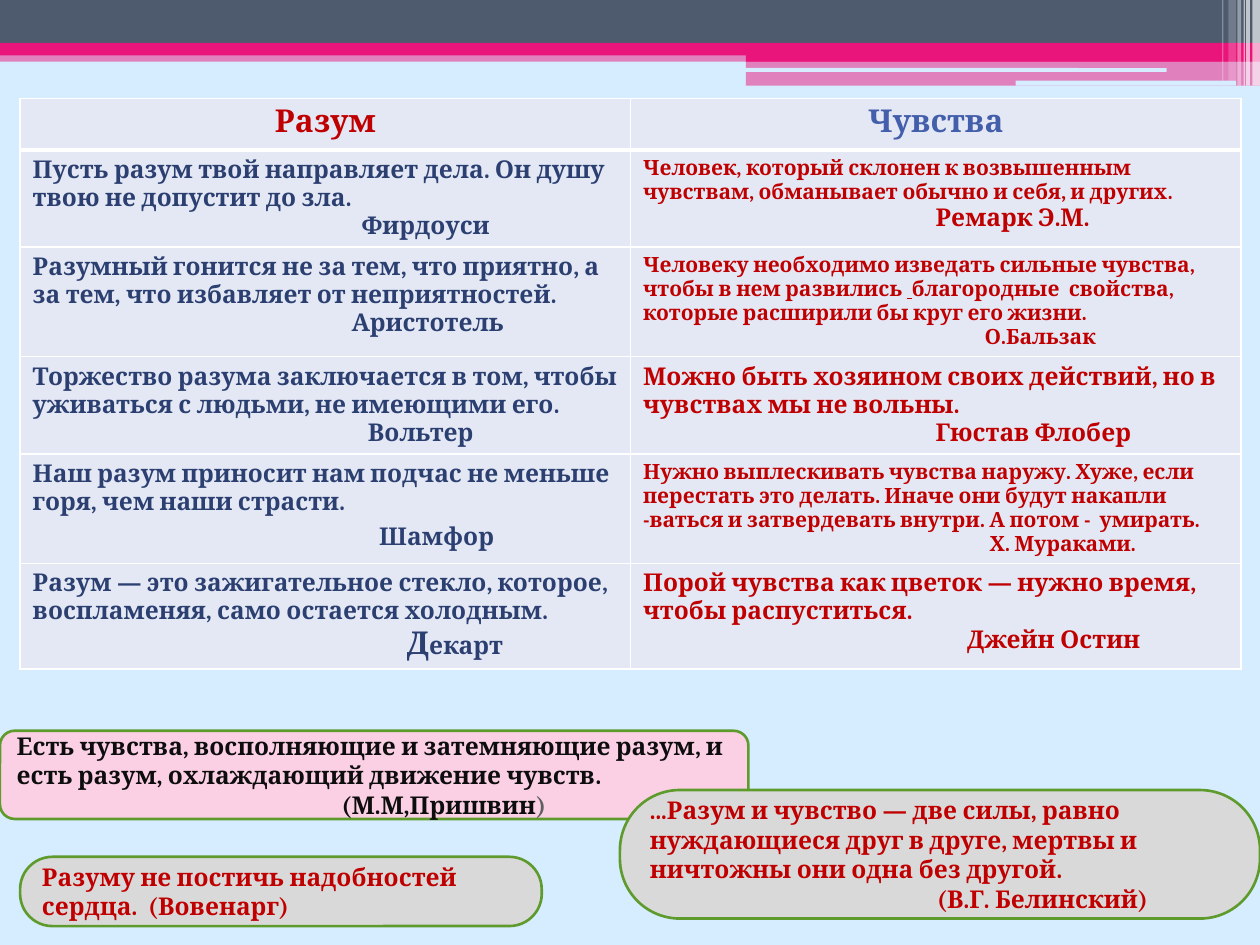
"""Build a slide of quotations about reason and feelings."""
from lxml import etree
from pptx import Presentation
from pptx.dml.color import RGBColor
from pptx.enum.shapes import MSO_SHAPE
from pptx.enum.text import MSO_ANCHOR, PP_ALIGN
from pptx.oxml.ns import qn
from pptx.util import Inches, Pt

RECT, ROUND = MSO_SHAPE.RECTANGLE, MSO_SHAPE.ROUNDED_RECTANGLE
MIDDLE = MSO_ANCHOR.MIDDLE
LEFT, CENTER = PP_ALIGN.LEFT, PP_ALIGN.CENTER
FONT = "Cambria"
WIDE, HIGH = 10, 7.5

HUES = {
    "sky": "D6ECFF", "slate": "4E5B6F", "pink": "EA157A", "white": "FFFFFF",
    "cell": "E3E8F4", "red": "C00000", "blue": "435EAA", "navy": "2C3F71",
    "rose": "FBD0E4", "gray": "D9D9D9", "green": "5E9B2C",
    "ink": "0D0D0D", "dim": "5F5F5F",
}

BANDS = [
    (RECT, 0, 0.4, WIDE, 0.09, "pink", 50),
    (RECT, 0, 0, WIDE, 0.34, "slate", 100),
    (RECT, 0, 0.34, WIDE, 0.1, "pink", 100),
    (RECT, 5.92, 0.39, 4.08, 0.1, "pink", 100),
    (RECT, 5.92, 0.48, 4.08, 0.2, "pink", 50),
    (ROUND, 5.91, 0.54, 3.35, 0.03, "sky", 100),
    (ROUND, 8.06, 0.64, 1.75, 0.04, "sky", 100),
]
STRIPES = [
    (9.94, 0.06, 0.68, 65), (9.89, 0.03, 0.68, 65), (9.87, 0.01, 0.68, 60),
    (9.82, 0.03, 0.68, 40), (9.75, 0.06, 0.64, 20), (9.7, 0.01, 0.64, 30),
]

HEADS = [("Разум", "red"), ("Чувства", "blue")]
INKS = ["navy", "red"]
ROWS = [0.41, 0.77, 0.87, 0.77, 0.87, 0.84]
QUOTES = [
    [(14, ["Пусть разум твой направляет дела. Он душу твою не допустит до зла."],
      14, ["Фирдоуси"], 2.61),
     (12, ["Человек, который склонен к возвышенным чувствам, обманывает обычно "
           "и себя, и других."], 14, ["Ремарк Э.М."], 2.32)],
    [(14, ["Разумный гонится не за тем, что приятно, а за тем, что избавляет "
           "от неприятностей."], 14, ["Аристотель"], 2.53),
     (12, ["Человеку необходимо изведать сильные чувства, чтобы в нем развились ",
           (" ", {"line": True}),
           "благородные  свойства, которые расширили бы круг его жизни."],
      12, ["О.Бальзак"], 2.71)],
    [(14, ["Торжество разума заключается в том, чтобы уживаться с людьми, "
           "не имеющими его."], 14, ["Вольтер"], 2.66),
     (14, ["Можно быть хозяином своих действий, но в чувствах мы не вольны."],
      14, ["Гюстав Флобер"], 2.32)],
    [(14, ["Наш разум приносит нам подчас не меньше горя, чем наши страсти."],
      14, ["Шамфор"], 2.75, 4),
     (12, ["Нужно выплескивать чувства наружу. Хуже, если перестать это делать. "
           "Иначе они будут накапли -ваться и затвердевать внутри. "
           "А потом -  умирать."], 12, ["Х. Мураками."], 2.75)],
    [(14, ["Разум — это зажигательное стекло, которое, воспламеняя, "
           "само остается холодным."], 14, [("Д", {"size": 18}), "екарт"], 2.97),
     (14, ["Порой чувства как цветок — нужно время, чтобы распуститься."],
      14, ["Джейн Остин"], 2.57)],
]

BOXES = [
    (0, 5.8, 5.94, 0.7, 0.167, "rose", "ink",
     ["Есть чувства, восполняющие и затемняющие разум, и есть разум, "
      "охлаждающий движение чувств."],
     ["(М.М,Пришвин", (")", {"hue": "dim"})], 2.58),
    (0.16, 6.8, 4.14, 0.55, 0.467, "gray", "red",
     ["Разуму не постичь надобностей сердца.  (Вовенарг)"], None, 0),
    (4.92, 6.27, 5.08, 1.02, 0.467, "gray", "red",
     ["...Разум и чувство — две силы, равно нуждающиеся друг в друге, мертвы "
      "и ничтожны они одна без другой."], ["(В.Г. Белинский)"], 2.28),
]


def rgb(hue):
    return RGBColor.from_string(HUES[hue])


def paint(fill, hue, alpha=100):
    fill.solid()
    fill.fore_color.rgb = rgb(hue)
    if alpha < 100:
        tint = fill._xPr.find(qn("a:solidFill"))[0]
        etree.SubElement(tint, qn("a:alpha")).set("val", str(alpha * 1000))


def draw(slide, kind, x, y, w, h, hue, alpha=100):
    shape = slide.shapes.add_shape(kind, *map(Inches, (x, y, w, h)))
    shape.shadow.inherit = False
    shape.line.fill.background()
    paint(shape.fill, hue, alpha)
    return shape


def write(para, parts, size, hue, align=LEFT, indent=0, gap=0):
    para.alignment = align
    para.space_before = Pt(gap)
    if indent:
        para._p.get_or_add_pPr().set("marL", str(Inches(indent)))
    for part in parts:
        text, look = (part, {}) if isinstance(part, str) else part
        run = para.add_run()
        run.text = text
        font = run.font
        font.name, font.bold = FONT, True
        font.size = Pt(look.get("size", size))
        font.color.rgb = rgb(look.get("hue", hue))
        font.underline = look.get("line", False)


def quote(frame, hue, size, parts, small, name, indent, gap=0):
    frame.word_wrap = True
    write(frame.paragraphs[0], parts, size, hue)
    if name:
        write(frame.add_paragraph(), name, small, hue, indent=indent, gap=gap)


def edge(cell, top, bottom):
    props = cell._tc.get_or_add_tcPr()
    sides = [("lnL", 1), ("lnR", 1), ("lnT", top), ("lnB", bottom)]
    for spot, (side, width) in enumerate(sides):
        line = etree.Element(qn("a:" + side), w=str(Pt(width)))
        fill = etree.SubElement(line, qn("a:solidFill"))
        etree.SubElement(fill, qn("a:srgbClr"), val=HUES["white"])
        props.insert(spot, line)


def grid(slide):
    table = slide.shapes.add_table(
        len(ROWS), len(HEADS), Inches(0.16), Inches(0.78),
        Inches(9.69), Inches(sum(ROWS))).table
    table.first_row = table.horz_banding = False
    for r, high in enumerate(ROWS):
        table.rows[r].height = Inches(high)
        for c, (head, hue) in enumerate(HEADS):
            cell = table.cell(r, c)
            paint(cell.fill, "cell")
            edge(cell, 3 if r == 1 else 1, 3 if r == 0 else 1)
            if r:
                quote(cell.text_frame, INKS[c], *QUOTES[r - 1][c])
            else:
                write(cell.text_frame.paragraphs[0], [head], 18, hue, CENTER)


def main():
    deck = Presentation()
    deck.slide_width, deck.slide_height = Inches(WIDE), Inches(HIGH)
    slide = deck.slides.add_slide(deck.slide_layouts[6])
    paint(slide.background.fill, "sky")
    for band in BANDS:
        draw(slide, *band)
    for x, w, h, alpha in STRIPES:
        draw(slide, RECT, x, 0, w, h, "white", alpha)
    grid(slide)
    for x, y, w, h, bend, hue, ink, parts, name, indent in BOXES:
        box = draw(slide, ROUND, x, y, w, h, hue)
        box.adjustments[0] = bend
        box.line.color.rgb = rgb("green")
        box.line.width = Pt(1.5)
        box.text_frame.vertical_anchor = MIDDLE
        quote(box.text_frame, ink, 14, parts, 14, name, indent)
    deck.save("out.pptx")


if __name__ == "__main__":
    main()
